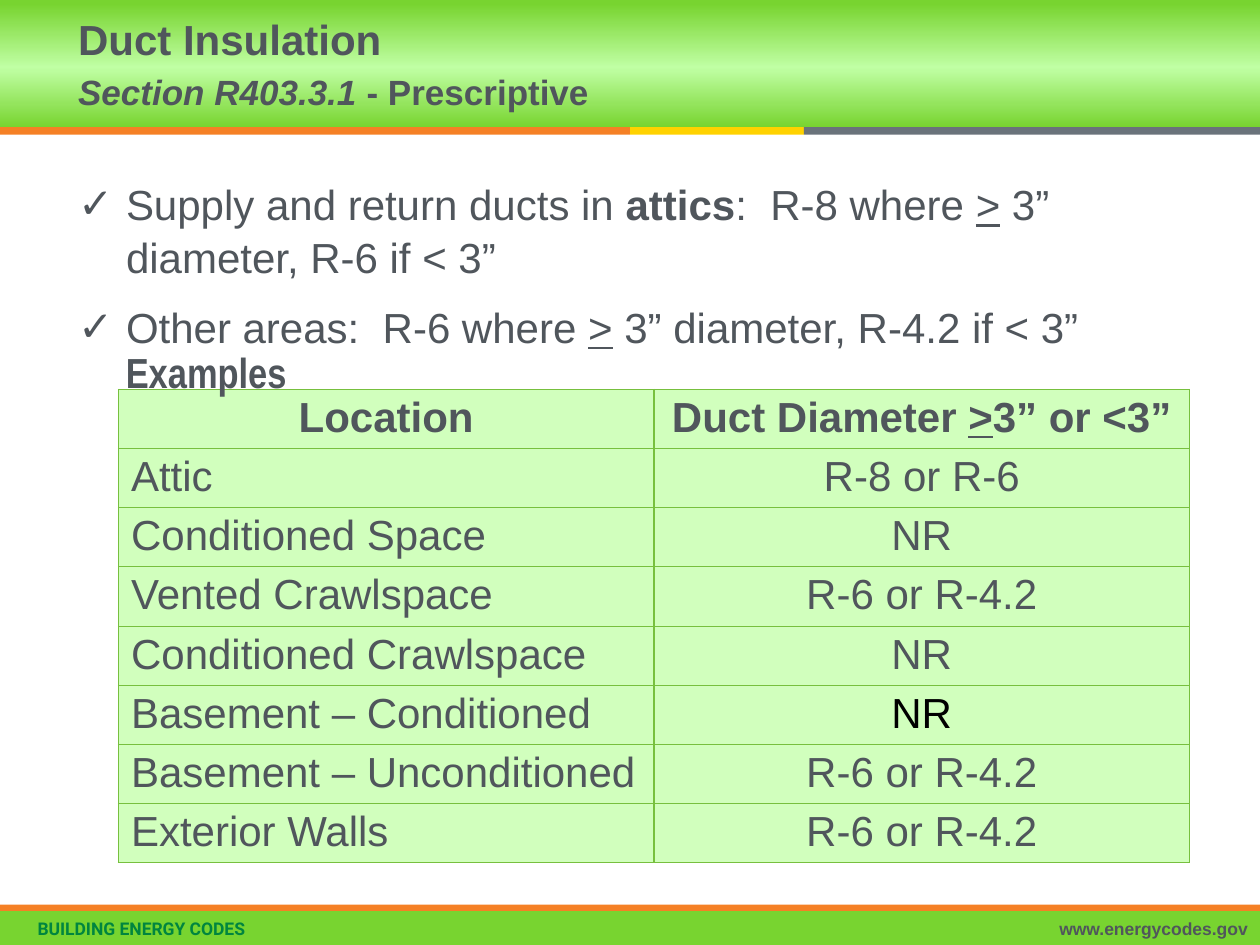
"""Builds the Duct Insulation slide with its prescriptive R-value table."""
from lxml import etree
from pptx import Presentation
from pptx.dml.color import RGBColor
from pptx.enum.shapes import MSO_SHAPE
from pptx.enum.text import MSO_ANCHOR, MSO_AUTO_SIZE, PP_ALIGN
from pptx.oxml import parse_xml
from pptx.oxml.ns import nsdecls, qn
from pptx.util import Pt

RECTANGLE = MSO_SHAPE.RECTANGLE
LEFT, CENTER, RIGHT = PP_ALIGN.LEFT, PP_ALIGN.CENTER, PP_ALIGN.RIGHT
TOP, MIDDLE = MSO_ANCHOR.TOP, MSO_ANCHOR.MIDDLE
NO_AUTOFIT = MSO_AUTO_SIZE.NONE
PX = 9144
COLORS = {
    "text": "50565C", "black": "000000", "brand": "00853F",
    "green": "78D430", "glow": "C0FFA4", "cell": "D1FFBD", "border": "77C03E",
    "orange": "F58025", "yellow": "FFD200", "gray": "6A737B",
}


def add_bar(left, top, width, height, color):
    bar = slide.shapes.add_shape(RECTANGLE, left * PX, top * PX, width * PX, height * PX)
    bar.shadow.inherit = False
    bar.fill.solid()
    bar.fill.fore_color.rgb = RGBColor.from_string(COLORS[color])
    bar.line.fill.background()
    return bar


def write_runs(paragraph, runs, size=24, font="Arial", color="text"):
    for text, style in runs:
        run = paragraph.add_run()
        run.text = text
        run.font.size = Pt(size)
        run.font.name = font
        run.font.bold = "b" in style
        run.font.italic = "i" in style
        run.font.underline = "u" in style
        run.font.color.rgb = RGBColor.from_string(COLORS[color])


prs = Presentation()
prs.slide_width, prs.slide_height = 1000 * PX, 750 * PX
slide = prs.slides.add_slide(prs.slide_layouts[1])
title, body = slide.placeholders

header = add_bar(0, 0, 1000, 101, "green")
header.fill.gradient()
header.fill.gradient_angle = 90
stops = header._element.spPr.find(qn("a:gradFill")).find(qn("a:gsLst"))
for stop in list(stops):
    stops.remove(stop)
for position, color in ((0, "green"), (47, "glow"), (97, "green")):
    stop = etree.SubElement(stops, qn("a:gs"), pos=str(position * 1000))
    etree.SubElement(stop, qn("a:srgbClr"), val=COLORS[color])

for left, top, width, height, color in (
    (0, 723, 1000, 27, "green"),
    (0, 101, 500, 6, "orange"),
    (500, 101, 138, 6, "yellow"),
    (638, 101, 362, 6, "gray"),
    (0, 718, 1000, 5, "orange"),
):
    add_bar(left, top, width, height, color)

for placeholder, left, top, width, height, anchor in (
    (title, 52, 0, 587, 101, MIDDLE),
    (body, 52, 135, 928, 573, TOP),
):
    placeholder.left, placeholder.top = left * PX, top * PX
    placeholder.width, placeholder.height = width * PX, height * PX
    placeholder.text_frame.auto_size = NO_AUTOFIT
    placeholder.text_frame.vertical_anchor = anchor
    slide.shapes._spTree.append(placeholder._element)

heading = title.text_frame.paragraphs[0]
heading.alignment = LEFT
heading.line_spacing = Pt(28)
write_runs(heading, [("Duct Insulation", "b")])
heading.add_line_break()
write_runs(heading, [("Section R403.3.1", "bi"), (" - Prescriptive", "b")], 20)

requirements = [
    [("Supply and return ducts in ", ""), ("attics", "b"), (":  R-8 where ", ""),
     (">", "u"), (" 3” diameter, R-6 if < 3”", "")],
    [("Other areas:  R-6 where ", ""), (">", "u"), (" 3” diameter, R-4.2 if < 3”", "")],
]
for index, runs in enumerate(requirements):
    requirement = body.text_frame.paragraphs[0] if index == 0 else body.text_frame.add_paragraph()
    requirement.line_spacing = 1.05
    requirement.space_before = Pt(9.6 if index else 0)
    properties = requirement._p.get_or_add_pPr()
    properties.set("marL", str(38 * PX))
    properties.set("indent", str(-38 * PX))
    etree.SubElement(properties, qn("a:buFont"), typeface="Arial")
    etree.SubElement(properties, qn("a:buChar"), char="✓")
    write_runs(requirement, runs)

insulation = [
    ("Attic", "R-8 or R-6"),
    ("Conditioned Space", "NR"),
    ("Vented Crawlspace", "R-6 or R-4.2"),
    ("Conditioned Crawlspace", "NR"),
    ("Basement – Conditioned", "NR"),
    ("Basement – Unconditioned", "R-6 or R-4.2"),
    ("Exterior Walls", "R-6 or R-4.2"),
]
rows = [([("Location", "b")], [("Duct Diameter ", "b"), (">", "bu"), ("3” or <3”", "b")])]
rows += [([(location, "")], [(value, "")]) for location, value in insulation]
table = slide.shapes.add_table(len(rows), 2, 94 * PX, 309 * PX, 850 * PX, 47 * len(rows) * PX).table
for row_index, row in enumerate(rows):
    for column_index, runs in enumerate(row):
        cell = table.cell(row_index, column_index)
        cell.margin_top, cell.margin_bottom = 4 * PX, 5 * PX
        cell_properties = cell._tc.get_or_add_tcPr()
        for side in ("lnL", "lnR", "lnT", "lnB"):
            cell_properties.append(parse_xml(
                f'<a:{side} {nsdecls("a")} w="9525"><a:solidFill>'
                f'<a:srgbClr val="{COLORS["border"]}"/></a:solidFill></a:{side}>'))
        cell.fill.solid()
        cell.fill.fore_color.rgb = RGBColor.from_string(COLORS["cell"])
        entry = cell.text_frame.paragraphs[0]
        entry.alignment = CENTER if row_index == 0 or column_index == 1 else LEFT
        color = "black" if (row_index, column_index) == (5, 1) else "text"
        write_runs(entry, runs, color=color)

for text, left, top, width, height, size, font, color, alignment in (
    ("BUILDING ENERGY CODES", 20, 724, 500, 26, 10, "Roboto", "brand", LEFT),
    ("www.energycodes.gov", 599, 724, 401, 26, 10, "Arial", "text", RIGHT),
    ("Examples", 90, 270, 286, 37, 24, "Arial Narrow", "text", LEFT),
):
    label = slide.shapes.add_textbox(left * PX, top * PX, width * PX, height * PX).text_frame
    label.word_wrap = True
    label.paragraphs[0].alignment = alignment
    write_runs(label.paragraphs[0], [(text, "b")], size, font, color)

prs.save("out.pptx")
